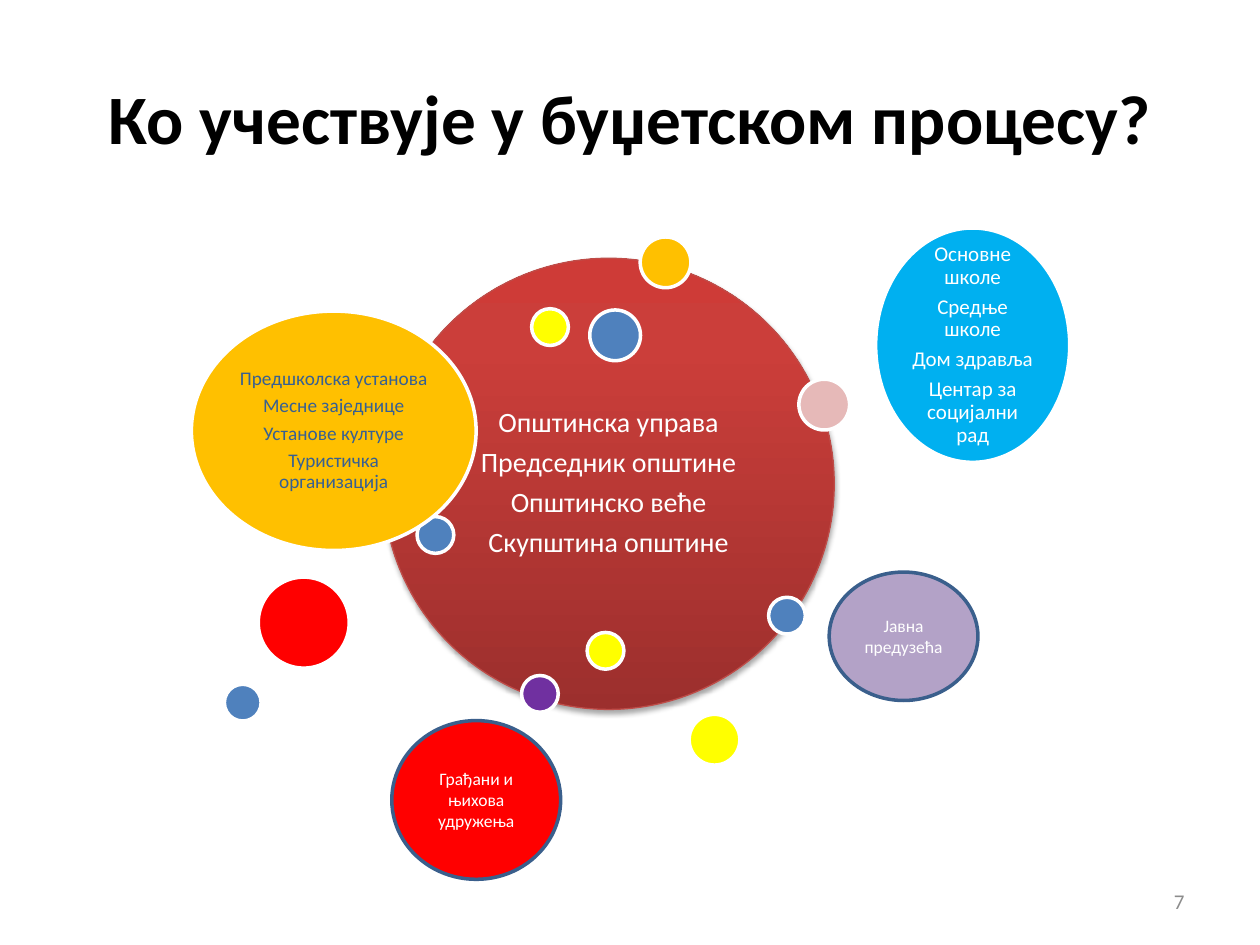
from copy import deepcopy

from lxml import etree
from pptx import Presentation
from pptx.dml.color import RGBColor
from pptx.enum.shapes import MSO_SHAPE
from pptx.enum.text import MSO_ANCHOR, PP_ALIGN
from pptx.oxml.ns import qn
from pptx.util import Pt

OVAL = MSO_SHAPE.OVAL
MIDDLE = MSO_ANCHOR.MIDDLE
CENTER, RIGHT = PP_ALIGN.CENTER, PP_ALIGN.RIGHT
FONT = "Calibri"
WHITE, BLUE, YELLOW, ORANGE, RED = "FFFFFF", "4F81BD", "FFFF00", "FFC000", "FF0000"
OUTLINE = "3A5F8C"
SMALL, MEDIUM = 21, 29  # dot diameters

# Accent dots: left, top, diameter, colour
BACK_DOTS = [
    (365.8, 135.4, MEDIUM, ORANGE),
    (298, 386, SMALL, "7030A0"),
    (439.2, 341.3, SMALL, BLUE),
    (393.8, 408.2, MEDIUM, YELLOW),
    (303.8, 176.4, SMALL, YELLOW),
    (238.3, 295.2, SMALL, BLUE),
]
FRONT_DOTS = [
    (337, 177.1, MEDIUM, BLUE),
    (147.6, 329.8, 52, RED),
    (456.5, 216.7, MEDIUM, "E6B9B8"),
    (128.2, 391, SMALL, BLUE),
    (335.5, 361.4, SMALL, YELLOW),
]


def rgb(color):
    return RGBColor.from_string(color)


def add_text(tf, lines, size=12, color=WHITE, bold=False, align=CENTER,
             inset=None, line_spacing=None, after=0):
    tf.word_wrap = True
    tf.vertical_anchor = MIDDLE
    if inset is not None:
        tf.margin_left = tf.margin_right = Pt(inset)
        tf.margin_top = tf.margin_bottom = Pt(inset)
    for i, line in enumerate(lines):
        p = tf.paragraphs[0] if i == 0 else tf.add_paragraph()
        p.alignment = align
        p.line_spacing = line_spacing
        p.space_after = Pt(after)
        r = p.add_run()
        r.text = line
        r.font.name = FONT
        r.font.size = Pt(size)
        r.font.bold = bold
        r.font.color.rgb = rgb(color)


def add_oval(s, x, y, w, h, fill, line=WHITE, width=2):
    sp = s.shapes.add_shape(OVAL, Pt(x), Pt(y), Pt(w), Pt(h))
    sp.shadow.inherit = False
    sp.fill.solid()
    sp.fill.fore_color.rgb = rgb(fill)
    sp.line.color.rgb = rgb(line)
    sp.line.width = Pt(width)
    return sp


def add_dots(s, dots):
    for x, y, d, color in dots:
        add_oval(s, x, y, d, d, color)


def add_list(sp, lines, size, color=WHITE, inset=3.6):
    add_text(sp.text_frame, lines, size=size, color=color, inset=inset,
             line_spacing=0.9, after=round(size * 0.35, 1))


def set_gradient(sp, colors, positions, angle):
    sp.fill.gradient()
    sp.fill.gradient_angle = angle
    stops = sp.fill._fill._gradFill.find(qn("a:gsLst"))
    stops.append(deepcopy(stops[0]))
    for stop, color, pos in zip(sp.fill.gradient_stops, colors, positions):
        stop.color.rgb = rgb(color)
        stop.position = pos


def add_shadow(sp):
    effects = sp._element.spPr.find(qn("a:effectLst"))
    shadow = etree.SubElement(effects, qn("a:outerShdw"), blurRad=str(Pt(3.1)),
                              dist=str(Pt(1.8)), dir="5400000", rotWithShape="0")
    color = etree.SubElement(shadow, qn("a:srgbClr"), val="000000")
    etree.SubElement(color, qn("a:alpha"), val="35000")


def main():
    prs = Presentation()
    prs.slide_width, prs.slide_height = Pt(720), Pt(540)
    s = prs.slides.add_slide(prs.slide_layouts[5])

    # Title and slide number
    title = s.shapes.title
    title.left, title.top, title.width, title.height = Pt(36), Pt(21.6), Pt(648), Pt(90)
    add_text(title.text_frame, ["Ко учествује у буџетском процесу?"],
             size=39.6, color="000000", bold=True)
    number = s.shapes.add_textbox(Pt(516), Pt(500.5), Pt(168), Pt(28.8))
    add_text(number.text_frame, ["7"], color="8C8C8C", align=RIGHT)

    # Central circle: municipal bodies
    core = add_oval(s, 218.9, 147.6, 257.8, 257.8, RED, line="BF4C48", width=0.75)
    set_gradient(core, ["9C2F2D", "CB3E3A", "CE3B37"], [0, 0.8, 1], 90)
    add_shadow(core)
    add_list(core, ["Општинска управа", "Председник општине",
                    "Општинско веће", "Скупштина општине"], 16, inset=5)

    # Institutions among the accent dots
    add_dots(s, BACK_DOTS)
    local = add_oval(s, 109.4, 177.8, 162.7, 136.8, ORANGE)
    add_list(local, ["Предшколска установа", "Месне заједнице",
                     "Установе културе", "Туристичка организација"], 11, color="376092")
    public = add_oval(s, 500.4, 130.3, 110.9, 133.9, "00B0F0")
    add_list(public, ["Основне школе", "Средње школе", "Дом здравља",
                      "Центар за социјални рад"], 12)
    add_dots(s, FRONT_DOTS)

    # Citizens and public companies
    citizens = add_oval(s, 223.9, 411.8, 96.5, 90.7, RED, line=OUTLINE)
    add_text(citizens.text_frame, ["Грађани и њихова удружења"], size=10)
    companies = add_oval(s, 473.8, 326.9, 85, 73.4, "B3A2C7", line=OUTLINE)
    add_text(companies.text_frame, ["Јавна предузећа"], size=10)

    prs.save("out.pptx")


if __name__ == "__main__":
    main()
